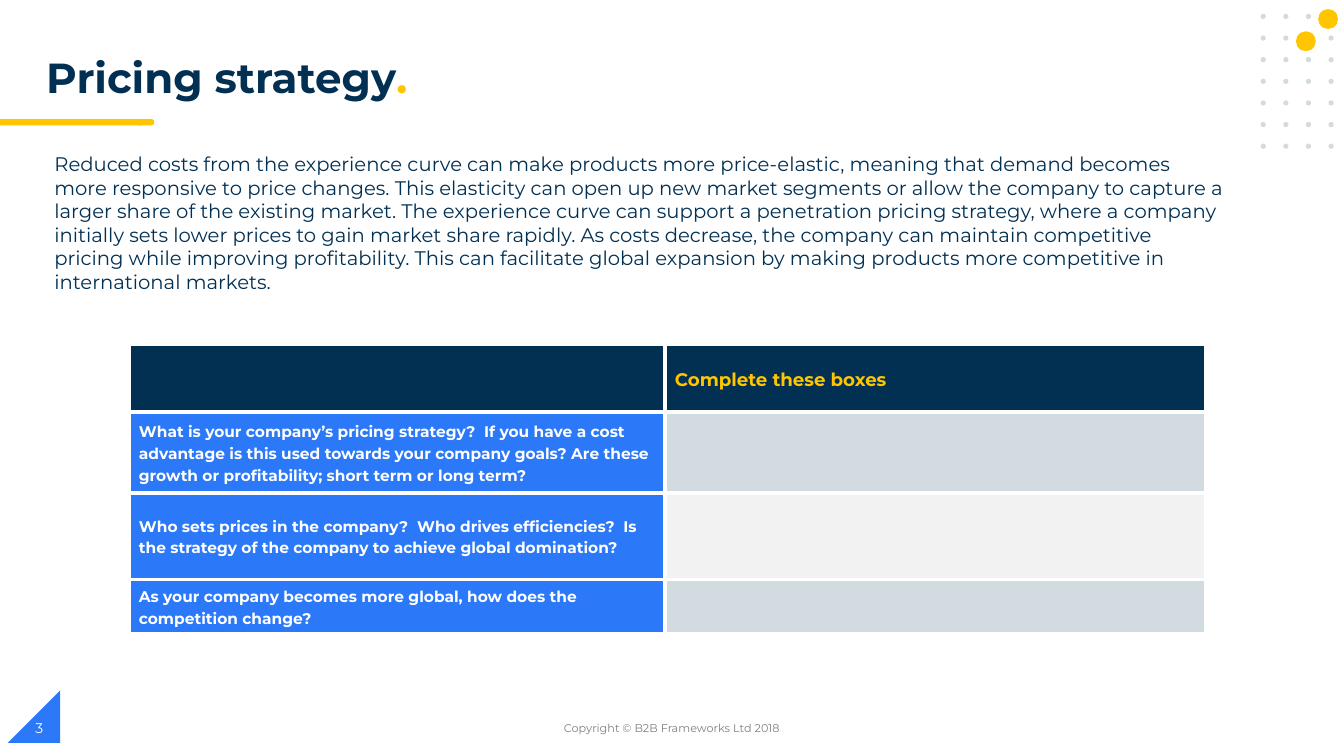
from dataclasses import dataclass
from itertools import product

from lxml.etree import SubElement
from pptx import Presentation
from pptx.dml.color import RGBColor
from pptx.enum.shapes import MSO_SHAPE
from pptx.enum.text import MSO_ANCHOR, MSO_AUTO_SIZE, PP_ALIGN
from pptx.oxml.ns import qn
from pptx.util import Cm, Pt


@dataclass(frozen=True)
class Theme:
    """Colours, font and type sizes of the slide."""
    navy: str = "023053"
    blue: str = "2B79F8"
    yellow: str = "FFC600"
    mist: str = "D1DBE0"
    pale: str = "F2F2F2"
    grey: str = "7F7F7F"
    white: str = "FFFFFF"
    font: str = "Montserrat"
    title_size: int = 30
    body_size: int = 14
    header_size: int = 13
    question_size: int = 11
    number_size: int = 10
    footer_size: int = 8


@dataclass(frozen=True)
class Box:
    """A region of the slide in centimetres."""
    left: float
    top: float
    width: float
    height: float

    def lengths(self):
        """Return the four sides as slide lengths."""
        return Cm(self.left), Cm(self.top), Cm(self.width), Cm(self.height)


THEME = Theme()
BODY = (
    "Reduced costs from the experience curve can make products more price-elastic, "
    "meaning that demand becomes more responsive to price changes. This elasticity can "
    "open up new market segments or allow the company to capture a larger share of the "
    "existing market. The experience curve can support a penetration pricing strategy, "
    "where a company initially sets lower prices to gain market share rapidly. As costs "
    "decrease, the company can maintain competitive pricing while improving profitability. "
    "This can facilitate global expansion by making products more competitive in "
    "international markets."
)
QUESTIONS = (
    "What is your company’s pricing strategy?  If you have a cost advantage is this used "
    "towards your company goals? Are these growth or profitability; short term or long term?",
    "Who sets prices in the company?  Who drives efficiencies?  Is the strategy of the "
    "company to achieve global domination?",
    "As your company becomes more global, how does the competition change?",
)


def style_run(run, size, color, bold=False):
    """Set the font of one run."""
    run.font.name = THEME.font
    run.font.size = Pt(size)
    run.font.bold = bold
    run.font.color.rgb = RGBColor.from_string(color)


def add_filled(slide, kind, box, color):
    """Add a plain shape without outline or shadow."""
    shape = slide.shapes.add_shape(kind, *box.lengths())
    shape.shadow.inherit = False
    shape.fill.solid()
    shape.fill.fore_color.rgb = RGBColor.from_string(color)
    shape.line.fill.background()
    return shape


def add_text(slide, box, text, size, color, anchor=MSO_ANCHOR.TOP, align=PP_ALIGN.LEFT):
    """Add a wrapping text box with one paragraph."""
    text_frame = slide.shapes.add_textbox(*box.lengths()).text_frame
    text_frame.word_wrap = True
    text_frame.vertical_anchor = anchor
    text_frame.text = text
    paragraph = text_frame.paragraphs[0]
    paragraph.alignment = align
    style_run(paragraph.runs[0], size, color)


def add_title(slide, box):
    """Fill the title placeholder and underline it from the slide edge."""
    title = slide.shapes.title
    title.left, title.top, title.width, title.height = box.lengths()
    text_frame = title.text_frame
    text_frame.auto_size = MSO_AUTO_SIZE.NONE
    text_frame.vertical_anchor = MSO_ANCHOR.TOP
    text_frame.text = "Pricing strategy"
    paragraph = text_frame.paragraphs[0]
    paragraph.alignment = PP_ALIGN.LEFT
    paragraph.line_spacing = 0.9
    paragraph.add_run().text = "."
    for run, color in zip(paragraph.runs, (THEME.navy, THEME.yellow)):
        style_run(run, THEME.title_size, color, bold=True)
    rule_top = box.top + box.height + 0.16
    add_filled(slide, MSO_SHAPE.FLOWCHART_TERMINATOR, Box(3.41, rule_top, 0.48, 0.16), THEME.yellow)
    add_filled(slide, MSO_SHAPE.RECTANGLE, Box(0, rule_top, 3.58, 0.16), THEME.yellow)


def add_dot_grid(slide, box, columns=4, rows=7):
    """Spread small dots over the box and lay two large ones on the diagonal."""
    dot, accent = 0.13, 0.5
    column_step = (box.width - dot) / (columns - 1)
    row_step = (box.height - dot) / (rows - 1)
    for column, row in product(range(columns), range(rows)):
        place = Box(box.left + column * column_step, box.top + row * row_step, dot, dot)
        add_filled(slide, MSO_SHAPE.OVAL, place, THEME.mist)
    for step in range(2):
        place = Box(box.left + 1.45 - step * 0.56, box.top - 0.12 + step * 0.56, accent, accent)
        add_filled(slide, MSO_SHAPE.OVAL, place, THEME.yellow)


def style_cell(cell, color):
    """Give a cell white borders, a fill and its margins."""
    properties = cell._tc.get_or_add_tcPr()
    for side in ("a:lnL", "a:lnR", "a:lnT", "a:lnB"):
        border = SubElement(properties, qn(side), w=str(Pt(3)))
        fill = SubElement(border, qn("a:solidFill"))
        SubElement(fill, qn("a:srgbClr"), val=THEME.white)
    cell.fill.solid()
    cell.fill.fore_color.rgb = RGBColor.from_string(color)
    cell.vertical_anchor = MSO_ANCHOR.MIDDLE
    cell.margin_left = cell.margin_right = Cm(0.25)
    cell.margin_top = cell.margin_bottom = 0


def write_cell(cell, text, size, color):
    """Write bold text into a cell."""
    cell.text_frame.text = text
    paragraph = cell.text_frame.paragraphs[0]
    paragraph.line_spacing = 1.15
    style_run(paragraph.runs[0], size, color, bold=True)


def add_question_table(slide, box):
    """Add the questions with empty answer boxes beside them."""
    row_heights = (1.73, 2.03, 2.18, 1.37)
    question_width = 13.51
    table = slide.shapes.add_table(len(row_heights), 2, *box.lengths()).table
    table.columns[0].width = Cm(question_width)
    table.columns[1].width = Cm(box.width - question_width)
    for row, height in zip(table.rows, row_heights):
        row.height = Cm(height)
    for cell in table.rows[0].cells:
        style_cell(cell, THEME.navy)
    write_cell(table.cell(0, 1), "Complete these boxes", THEME.header_size, THEME.yellow)
    for index, question in enumerate(QUESTIONS, start=1):
        style_cell(table.cell(index, 0), THEME.blue)
        style_cell(table.cell(index, 1), THEME.mist if index % 2 else THEME.pale)
        write_cell(table.cell(index, 0), question, THEME.question_size, THEME.white)


def add_footer(slide, box):
    """Add the corner triangle, slide number and copyright line."""
    triangle = add_filled(slide, MSO_SHAPE.RIGHT_TRIANGLE,
                          Box(box.left + 0.2, box.top, 1.32, 1.32), THEME.blue)
    triangle._element.spPr.find(qn("a:xfrm")).set("flipH", "1")
    line_top = box.top + 0.43
    add_text(slide, Box(box.left + 0.64, line_top, 7.62, 1.02), "3",
             THEME.number_size, THEME.white, MSO_ANCHOR.MIDDLE)
    copyright_width = 11.43
    add_text(slide, Box(box.left + (box.width - copyright_width) / 2, line_top, copyright_width, 1.02),
             "Copyright © B2B Frameworks Ltd 2018",
             THEME.footer_size, THEME.grey, MSO_ANCHOR.MIDDLE, PP_ALIGN.CENTER)


def main():
    """Build and save the pricing strategy slide."""
    presentation = Presentation()
    presentation.slide_width, presentation.slide_height = Cm(33.87), Cm(19.05)
    slide = presentation.slides.add_slide(presentation.slide_layouts[5])
    add_title(slide, Box(0.91, 1.32, 14.33, 1.52))
    add_dot_grid(slide, Box(31.77, 0.35, 1.84, 3.4))
    add_text(slide, Box(1.12, 3.71, 30.02, 3.86), BODY, THEME.body_size, THEME.navy)
    add_question_table(slide, Box(3.25, 8.66, 27.15, 7.31))
    add_footer(slide, Box(0, 17.4, 33.87, 1.65))
    presentation.save("out.pptx")


if __name__ == "__main__":
    main()
